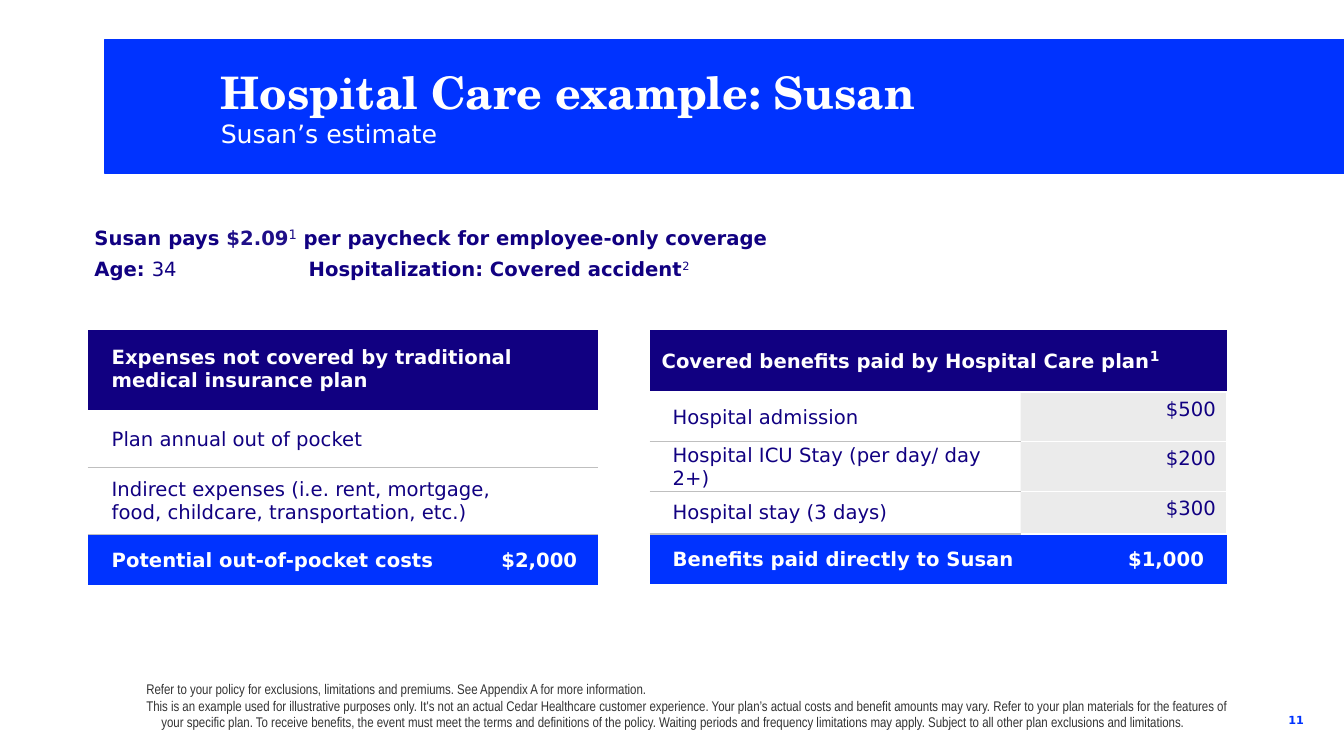
from dataclasses import dataclass

from lxml.etree import SubElement
from pptx import Presentation
from pptx.dml.color import RGBColor
from pptx.enum.shapes import MSO_SHAPE
from pptx.enum.text import MSO_ANCHOR, MSO_AUTO_SIZE, PP_ALIGN
from pptx.oxml.ns import qn
from pptx.util import Pt


@dataclass(frozen=True)
class Theme:
    navy: str = "110081"
    price: str = "1F0F88"
    blue: str = "0033FF"
    white: str = "FFFFFF"
    rule: str = "BFBFBF"
    shade: str = "D9D9D9"
    note: str = "333333"
    sans: str = "DejaVu Sans"
    serif: str = "TeX Gyre Schola"
    narrow: str = "Arial Narrow"
    title_size: int = 32
    subtitle_size: int = 18
    text_size: int = 14
    mark_size: int = 16
    header_mark_size: int = 17
    note_size: int = 10
    number_size: int = 8


THEME = Theme()
PLAIN_TABLE_STYLE = "{2D5ABB26-0587-4C30-8999-92F81FD0307C}"
LABEL_RIGHT = 1


def style_run(run, size=THEME.text_size, color=THEME.navy, bold=False,
              face=THEME.sans, raised=False):
    run.font.size = Pt(size)
    run.font.name = face
    run.font.bold = bold
    run.font.color.rgb = RGBColor.from_string(color)
    if raised:
        run._r.get_or_add_rPr().set("baseline", "30000")


def write(paragraph, *pieces):
    """Fill a paragraph from (text, style) pairs."""
    for text, style in pieces:
        run = paragraph.add_run()
        run.text = text
        style_run(run, **style)


def set_insets(target, left, top, right, bottom):
    target.margin_left, target.margin_top = Pt(left), Pt(top)
    target.margin_right, target.margin_bottom = Pt(right), Pt(bottom)


def add_text(slide, left, top, width, height, insets=(0, 0, 0, 0),
             anchor=MSO_ANCHOR.BOTTOM):
    frame = slide.shapes.add_textbox(
        Pt(left), Pt(top), Pt(width), Pt(height)).text_frame
    frame.word_wrap = True
    frame.vertical_anchor = anchor
    set_insets(frame, *insets)
    return frame


def add_fact(slide, left, top, width, *pieces):
    frame = add_text(slide, left, top, width, 29, (0, 3.6, 7.2, 3.6),
                     MSO_ANCHOR.TOP)
    write(frame.paragraphs[0], *pieces)


def add_banner(slide, heading, subheading):
    title = slide.shapes.title
    band = slide.shapes.add_shape(
        MSO_SHAPE.RECTANGLE, Pt(75), Pt(28), Pt(885), Pt(96))
    band.shadow.inherit = False
    band.fill.solid()
    band.fill.fore_color.rgb = RGBColor.from_string(THEME.blue)
    band.line.color.rgb = RGBColor.from_string(THEME.blue)
    band.line.width = Pt(1)
    title._element.addprevious(band._element)

    title.left, title.top = Pt(150.5), Pt(28)
    title.width, title.height = Pt(798), Pt(96)
    frame = title.text_frame
    frame.auto_size = MSO_AUTO_SIZE.NONE
    frame.vertical_anchor = MSO_ANCHOR.MIDDLE
    frame.text = f"{heading}\n{subheading}"
    looks = (dict(size=THEME.title_size, face=THEME.serif, bold=True),
             dict(size=THEME.subtitle_size))
    for paragraph, look in zip(frame.paragraphs, looks):
        paragraph.alignment = PP_ALIGN.LEFT
        style_run(paragraph.runs[0], color=THEME.white, **look)


def add_plain_table(slide, left, top, columns, rows):
    table = slide.shapes.add_table(
        len(rows), len(columns), Pt(left), Pt(top),
        Pt(sum(columns)), Pt(sum(rows))).table
    table.first_row = table.horz_banding = False
    table._tbl.tblPr.find(qn("a:tableStyleId")).text = PLAIN_TABLE_STYLE
    for column, width in zip(table.columns, columns):
        column.width = Pt(width)
    for row, height in zip(table.rows, rows):
        row.height = Pt(height)
    return table


def format_cell(cell, insets, fill=None, borders=None, alpha=None,
                anchor=MSO_ANCHOR.MIDDLE):
    """Set insets, borders ({side: colour}, sides in L R T B order) and fill."""
    set_insets(cell, *insets)
    cell.vertical_anchor = anchor
    properties = cell._tc.get_or_add_tcPr()
    for side, color in (borders or {}).items():
        line = SubElement(properties, qn(f"a:ln{side}"), w=str(Pt(1)))
        solid = SubElement(line, qn("a:solidFill"))
        SubElement(solid, qn("a:srgbClr"), val=color)
    if fill is None:
        cell.fill.background()
        return
    cell.fill.solid()
    cell.fill.fore_color.rgb = RGBColor.from_string(fill)
    if alpha:
        tint = properties.find(qn("a:solidFill"))[0]
        SubElement(tint, qn("a:alpha"), val=str(alpha * 1000))


def fill_header(cell, insets, *pieces):
    format_cell(cell, insets, THEME.navy,
                {"T": THEME.white, "B": THEME.white})
    write(cell.text_frame.paragraphs[0], *pieces)


def fill_label(cell, text, left, is_first, is_last):
    borders = {"T": THEME.white if is_first else THEME.rule}
    if not is_last:
        borders["B"] = THEME.rule
    format_cell(cell, (left, 0.7, LABEL_RIGHT, 0), borders=borders)
    cell.text_frame.text = text
    for paragraph in cell.text_frame.paragraphs:
        style_run(paragraph.runs[0])


def fill_total(cell, text, insets, align=PP_ALIGN.LEFT, tab=None):
    format_cell(cell, insets, THEME.blue)
    paragraph = cell.text_frame.paragraphs[0]
    paragraph.alignment = align
    if tab:
        stops = SubElement(paragraph._p.get_or_add_pPr(), qn("a:tabLst"))
        SubElement(stops, qn("a:tab"), pos=str(Pt(tab)), algn="r")
    write(paragraph, (text, dict(color=THEME.white, bold=True)))


def add_expenses(slide):
    left = 17.3
    labels = ("Plan annual out of pocket",
              "Indirect expenses (i.e. rent, mortgage,\n"
              "food, childcare, transportation, etc.)")
    table = add_plain_table(slide, 62.5, 235, [365], [58, 41, 48, 36])
    fill_header(table.cell(0, 0), (left, 6.5, 10.8, 6.5),
                ("Expenses not covered by traditional medical insurance plan",
                 dict(color=THEME.white, bold=True)))
    for row, label in enumerate(labels, 1):
        fill_label(table.cell(row, 0), label, left,
                   row == 1, row == len(labels))
    fill_total(table.cell(3, 0), "Potential out-of-pocket costs\t$2,000",
               (left, 0.7, LABEL_RIGHT, 0), tab=332.5)


def add_benefits(slide):
    left = 16.5
    benefits = (("Hospital admission", "$500"),
                ("Hospital ICU Stay (per day/ day 2+)", "$200"),
                ("Hospital stay (3 days)", "$300"))
    table = add_plain_table(slide, 464, 235, [265, 147.5],
                            [45, 35.5, 35.5, 30.5, 35.5])
    header = table.cell(0, 0)
    header.merge(table.cell(0, 1))
    look = dict(color=THEME.white, bold=True)
    fill_header(header, (8.6, 0, 8.6, 0),
                ("Covered benefits paid by Hospital Care plan", look),
                ("1", dict(look, size=THEME.header_mark_size, raised=True)))
    for row, (label, amount) in enumerate(benefits, 1):
        fill_label(table.cell(row, 0), label, left,
                   row == 1, row == len(benefits))
        cell = table.cell(row, 1)
        format_cell(cell, (8, 4.3, 8, 4.3), THEME.shade,
                    dict.fromkeys("RTB", THEME.white), 50, MSO_ANCHOR.TOP)
        paragraph = cell.text_frame.paragraphs[0]
        paragraph.alignment = PP_ALIGN.RIGHT
        write(paragraph, (amount, {}))
    fill_total(table.cell(4, 0), "Benefits paid directly to Susan",
               (left, 0.7, LABEL_RIGHT, 0))
    fill_total(table.cell(4, 1), "$1,000", (LABEL_RIGHT, 0.7, left, 0),
               PP_ALIGN.RIGHT)


def add_footnotes(slide, *notes):
    frame = add_text(slide, 104.5, 492, 780.5, 30)
    frame.text = "\n".join(notes)
    for paragraph in frame.paragraphs:
        indents = paragraph._p.get_or_add_pPr()
        indents.set("marL", str(Pt(10.8)))
        indents.set("indent", str(-Pt(10.8)))
        style_run(paragraph.runs[0], THEME.note_size, THEME.note,
                  face=THEME.narrow)


def add_page_number(slide, number):
    paragraph = add_text(slide, 903.5, 505, 28, 14).paragraphs[0]
    paragraph.alignment = PP_ALIGN.RIGHT
    write(paragraph, (number, dict(size=THEME.number_size, color=THEME.blue,
                                   bold=True)))


def main():
    deck = Presentation()
    deck.slide_width, deck.slide_height = Pt(960), Pt(540)
    slide = deck.slides.add_slide(deck.slide_layouts[5])
    bold = dict(bold=True)

    add_banner(slide, "Hospital Care example: Susan", "Susan’s estimate")
    add_fact(slide, 67.5, 156, 880, ("Susan pays ", bold),
             ("$2.09", dict(bold=True, color=THEME.price)),
             ("1", dict(size=THEME.mark_size, color=THEME.price, raised=True)),
             (" per paycheck for employee-only coverage", bold))
    add_fact(slide, 67.5, 180, 150, ("Age: ", bold), ("34", {}))
    add_fact(slide, 220.5, 180, 365,
             ("Hospitalization: Covered accident", bold),
             ("2", dict(raised=True)))
    add_expenses(slide)
    add_benefits(slide)
    add_footnotes(
        slide,
        "Refer to your policy for exclusions, limitations and premiums. "
        "See Appendix A for more information.",
        "This is an example used for illustrative purposes only. It's not an "
        "actual Cedar Healthcare customer experience. Your plan’s actual "
        "costs and benefit amounts may vary. Refer to your plan materials for "
        "the features of your specific plan. To receive benefits, the event "
        "must meet the terms and definitions of the policy. Waiting periods "
        "and frequency limitations may apply. Subject to all other plan "
        "exclusions and limitations.")
    add_page_number(slide, "11")
    deck.save("out.pptx")


if __name__ == "__main__":
    main()
